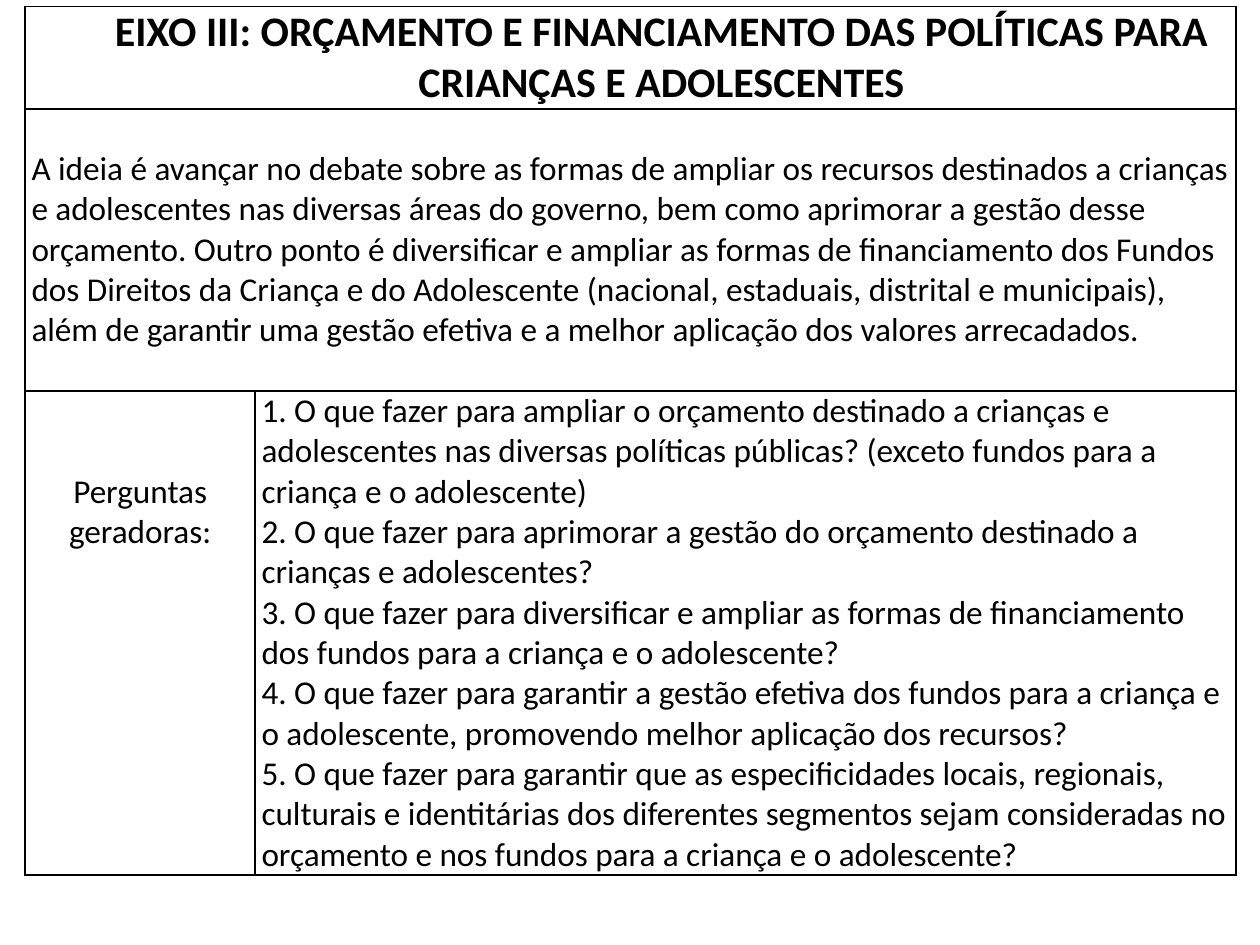
from lxml import etree
from pptx import Presentation
from pptx.dml.color import RGBColor
from pptx.enum.text import MSO_ANCHOR, PP_ALIGN
from pptx.oxml.ns import qn
from pptx.util import Inches, Pt

LEFT, CENTER = PP_ALIGN.LEFT, PP_ALIGN.CENTER
TOP = MSO_ANCHOR.TOP
WIDTH, HEIGHT = 10, 7.5
TABLE_BOX = (0.2, 0.05, 9.61, 6.89)
COLUMN_SHARES = (0.19, 0.81)
ROW_SHARES = (0.118, 0.325, 0.557)
LINE = 0.32
BLACK = "000000"

TITLE = "EIXO III: ORÇAMENTO E FINANCIAMENTO DAS POLÍTICAS PARA CRIANÇAS E ADOLESCENTES"
IDEA = (
    "A ideia é avançar no debate sobre as formas de ampliar os recursos destinados a crianças "
    "e adolescentes nas diversas áreas do governo, bem como aprimorar a gestão desse orçamento. "
    "Outro ponto é diversificar e ampliar as formas de financiamento dos Fundos dos Direitos da "
    "Criança e do Adolescente (nacional, estaduais, distrital e municipais), além de garantir "
    "uma gestão efetiva e a melhor aplicação dos valores arrecadados."
)
LABEL = "Perguntas geradoras:"
QUESTIONS = (
    "1. O que fazer para ampliar o orçamento destinado a crianças e adolescentes nas diversas "
    "políticas públicas? (exceto fundos para a criança e o adolescente)",
    "2. O que fazer para aprimorar a gestão do orçamento destinado a crianças e adolescentes?",
    "3. O que fazer para diversificar e ampliar as formas de financiamento dos fundos para a "
    "criança e o adolescente?",
    "4. O que fazer para garantir a gestão efetiva dos fundos para a criança e o adolescente, "
    "promovendo melhor aplicação dos recursos?",
    "5. O que fazer para garantir que as especificidades locais, regionais, culturais e "
    "identitárias dos diferentes segmentos sejam consideradas no orçamento e nos fundos para a "
    "criança e o adolescente?",
)


def color(value):
    """Turn a hex string into a colour."""
    return RGBColor.from_string(value)


def write(cell, *texts, size=19, bold=False, align=LEFT, top=0, indent=0):
    """Write one paragraph per text into a cell."""
    cell.margin_left = cell.margin_right = Inches(0.05)
    cell.margin_top, cell.margin_bottom = Inches(top), 0
    cell.vertical_anchor = TOP
    frame = cell.text_frame
    for index, text in enumerate(texts):
        para = frame.add_paragraph() if index else frame.paragraphs[0]
        para.alignment = align
        if indent:
            para._p.get_or_add_pPr().set("marL", str(Inches(indent)))
        span = para.add_run()
        span.text = text
        span.font.name, span.font.size, span.font.bold = "Calibri", Pt(size), bold
        span.font.color.rgb = color(BLACK)


def outline(cell, value=BLACK, width=1):
    """Give a cell no fill and a border on every side."""
    cell.fill.background()
    properties = cell._tc.get_or_add_tcPr()
    for index, side in enumerate(("a:lnL", "a:lnR", "a:lnT", "a:lnB")):
        border = etree.Element(qn(side), w=str(Pt(width)))
        fill = etree.SubElement(border, qn("a:solidFill"))
        etree.SubElement(fill, qn("a:srgbClr"), val=value)
        properties.insert(index, border)


def add_axis_table(page, box):
    """Place the table with the axis title, its idea and its questions."""
    left, top, width, height = box
    frame = page.shapes.add_table(
        len(ROW_SHARES), len(COLUMN_SHARES), *(Inches(length) for length in box)
    )
    table = frame.table
    table.first_row = table.horz_banding = False
    for column, share in zip(table.columns, COLUMN_SHARES):
        column.width = Inches(width * share)
    for row, share in zip(table.rows, ROW_SHARES):
        row.height = Inches(height * share)
    for cell in table.iter_cells():
        outline(cell)
    for row in (0, 1):
        table.cell(row, 0).merge(table.cell(row, 1))
    write(table.cell(0, 0), TITLE, size=24, bold=True, align=CENTER, indent=0.49)
    write(table.cell(1, 0), IDEA, top=LINE)
    write(table.cell(2, 0), LABEL, align=CENTER, top=2 * LINE)
    write(table.cell(2, 1), *QUESTIONS)


def main():
    """Build the deck and save it."""
    deck = Presentation()
    deck.slide_width, deck.slide_height = Inches(WIDTH), Inches(HEIGHT)
    page = deck.slides.add_slide(deck.slide_layouts[6])
    add_axis_table(page, TABLE_BOX)
    deck.save("out.pptx")


if __name__ == "__main__":
    main()
